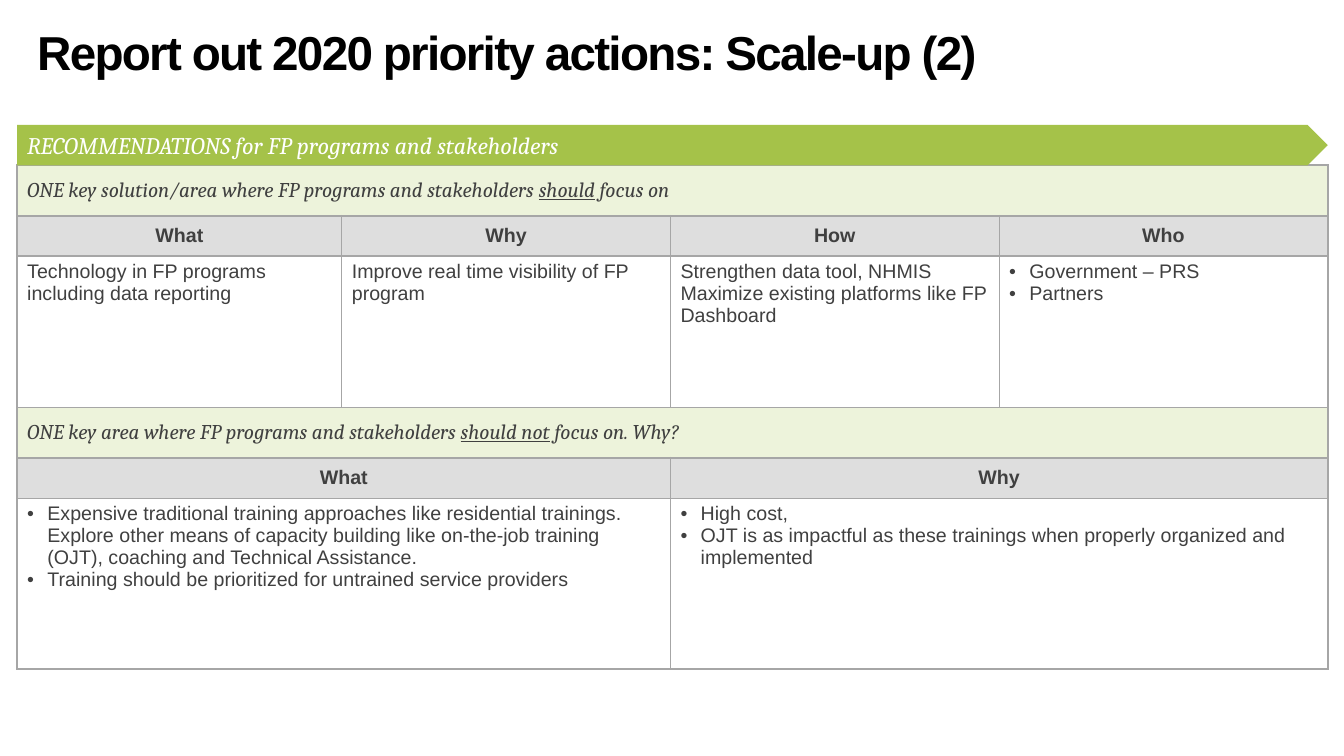
from lxml import etree
from pptx import Presentation, util as u
from pptx.dml.color import RGBColor
from pptx.enum import shapes, text
from pptx.oxml.ns import qn

W, H = 13.33, 7.5
LEFT, WIDTH = 0.17, 13
BAR_TOP, BAR_H = 1.24, 0.4
COLS = [3.22, 3.26, 3.26, 3.26]
ROWS = [0.5, 0.4, 1.5, 0.5, 0.4, 1.7]
THICK, THIN = 1.5, 0.75
RULES = [THICK, THICK, THICK, THIN, THICK, THIN, THICK]  # horizontal lines
GREEN, PALE, GREY = "A5C249", "EDF3DB", "DEDEDE"
BORDER, INK = "A6A6A6", "404040"


def write(tf, paragraphs, size=14, font="Arial", color=INK, bold=False,
          italic=False, align=None, bullet=False, tracking=None, spacing=None):
    """Fill a text frame; text between underscores is underlined."""
    for i, line in enumerate(paragraphs):
        p = tf.paragraphs[0] if i == 0 else tf.add_paragraph()
        p.alignment, p.line_spacing = align, spacing
        if bullet:
            pPr = p._p.get_or_add_pPr()
            pPr.set("marL", str(u.Inches(0.2)))
            pPr.set("indent", str(u.Inches(-0.2)))
            etree.SubElement(pPr, qn("a:buFont")).set("typeface", "Arial")
            etree.SubElement(pPr, qn("a:buChar")).set("char", "•")
        for j, part in enumerate(line.split("_")):
            r = p.add_run()
            r.text = part
            f = r.font
            f.size, f.name, f.bold, f.italic = u.Pt(size), font, bold, italic
            f.color.rgb = RGBColor.from_string(color)
            if j % 2:
                f.underline = True
            if tracking:
                r._r.get_or_add_rPr().set("spc", str(int(tracking * 100)))


def set_borders(cell, **widths):
    tcPr = cell._tc.get_or_add_tcPr()
    for side in "LRTB":
        ln = etree.SubElement(tcPr, qn(f"a:ln{side}"), w=str(u.Pt(widths[side])))
        fill = etree.SubElement(ln, qn("a:solidFill"))
        etree.SubElement(fill, qn("a:srgbClr")).set("val", BORDER)


prs = Presentation()
prs.slide_width, prs.slide_height = u.Inches(W), u.Inches(H)
s = prs.slides.add_slide(prs.slide_layouts[6])

# Title
sp = s.shapes.add_textbox(u.Inches(0.27), u.Inches(0.24), u.Inches(12.8), u.Inches(0.65))
tf = sp.text_frame
tf.word_wrap = True
tf.vertical_anchor = text.MSO_ANCHOR.TOP
write(tf, ["Report out 2020 priority actions: Scale-up (2)"], size=34,
      color="000000", bold=True, tracking=-1.2, spacing=0.9)

# Table content: each row has a kind and equally wide cells
rows = [
    ("band", [["ONE key solution/area where FP programs and stakeholders _should_ focus on"]]),
    ("head", [["What"], ["Why"], ["How"], ["Who"]]),
    ("body", [["Technology in FP programs including data reporting"],
              ["Improve real time visibility of FP program"],
              ["Strengthen data tool, NHMIS",
               "Maximize existing platforms like FP Dashboard"],
              ["Government – PRS", "Partners"]]),
    ("band", [["ONE key area where FP programs and stakeholders _should not_ focus on. Why?"]]),
    ("head", [["What"], ["Why"]]),
    ("body", [["Expensive traditional training approaches like residential trainings. "
               "Explore other means of capacity building like on-the-job training (OJT), "
               "coaching and Technical Assistance.",
               "Training should be prioritized for untrained service providers"],
              ["High cost,",
               "OJT is as impactful as these trainings when properly organized and implemented"]]),
]
bulleted = {(2, 3), (5, 0), (5, 1)}
styles = {
    "band": dict(size=15, font="Cambria", italic=True),
    "head": dict(bold=True, align=text.PP_ALIGN.CENTER),
    "body": {},
}
fills = {"band": PALE, "head": GREY}

# Table grid
tbl = s.shapes.add_table(len(ROWS), len(COLS), u.Inches(LEFT), u.Inches(BAR_TOP + BAR_H),
                         u.Inches(WIDTH), u.Inches(sum(ROWS))).table
tbl.first_row = tbl.horz_banding = False
for col, width in zip(tbl.columns, COLS):
    col.width = u.Inches(width)
for row, height in zip(tbl.rows, ROWS):
    row.height = u.Inches(height)

# Table cells
for y, (kind, cells) in enumerate(rows):
    span = len(COLS) // len(cells)
    for x, lines in enumerate(cells):
        first, last = x * span, (x + 1) * span - 1
        cell = tbl.cell(y, first)
        if span > 1:
            cell.merge(tbl.cell(y, last))
        for c in range(first, last + 1):
            part = tbl.cell(y, c)
            set_borders(part, L=THIN if first else THICK,
                        R=THIN if last < len(COLS) - 1 else THICK,
                        T=RULES[y], B=RULES[y + 1])
            if kind in fills:
                part.fill.solid()
                part.fill.fore_color.rgb = RGBColor.from_string(fills[kind])
            else:
                part.fill.background()
        cell.vertical_anchor = text.MSO_ANCHOR.TOP if kind == "body" else text.MSO_ANCHOR.MIDDLE
        write(cell.text_frame, lines, bullet=(y, x) in bulleted, **styles[kind])

# Recommendations arrow bar
sp = s.shapes.add_shape(shapes.MSO_SHAPE.PENTAGON, u.Inches(LEFT), u.Inches(BAR_TOP),
                        u.Inches(WIDTH), u.Inches(BAR_H))
sp.shadow.inherit = False
sp.fill.solid()
sp.fill.fore_color.rgb = RGBColor.from_string(GREEN)
sp.line.fill.background()
sp.text_frame.vertical_anchor = text.MSO_ANCHOR.MIDDLE
write(sp.text_frame, ["RECOMMENDATIONS for FP programs and stakeholders"], size=17,
      font="Cambria", color="FFFFFF", italic=True, align=text.PP_ALIGN.LEFT)

prs.save("out.pptx")
